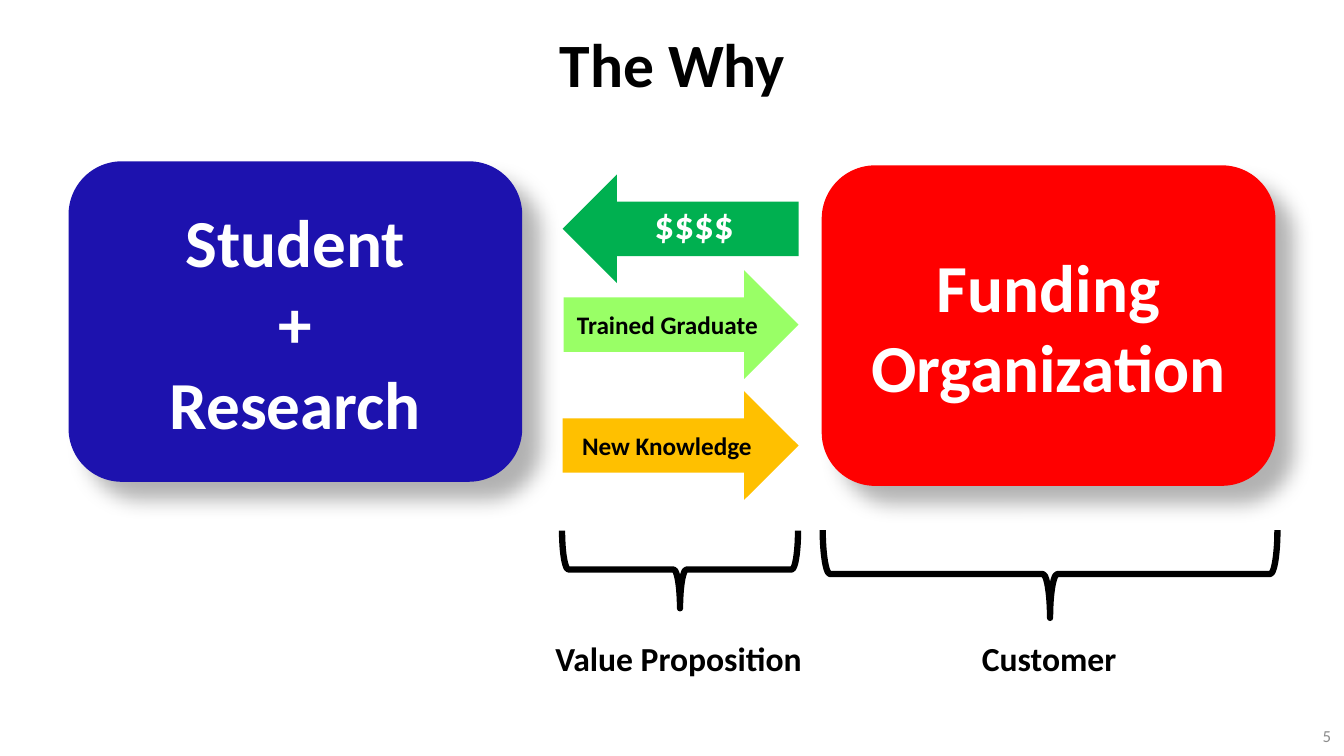
from dataclasses import dataclass

from lxml import etree
from pptx import Presentation
from pptx import util as u
from pptx.dml.color import RGBColor
from pptx.enum import shapes, text
from pptx.oxml import ns

SCALE = 9144
FONT = "Calibri"
BLACK = RGBColor(0x00, 0x00, 0x00)
WHITE = RGBColor(0xFF, 0xFF, 0xFF)
GRAY = RGBColor(0x8C, 0x8C, 0x8C)
BLUE = RGBColor(0x1D, 0x12, 0xAE)
RED = RGBColor(0xFF, 0x00, 0x00)
GREEN = RGBColor(0x00, 0xB0, 0x50)
LIME = RGBColor(0x99, 0xFF, 0x66)
AMBER = RGBColor(0xFF, 0xC0, 0x00)

SHAPE = shapes.MSO_SHAPE
ALIGN = text.PP_ALIGN
ANCHOR = text.MSO_ANCHOR


@dataclass(frozen=True)
class Frame:
    left: int
    top: int
    width: int
    height: int

    def emu(self) -> tuple[int, ...]:
        return tuple(side * SCALE for side in (self.left, self.top, self.width, self.height))


@dataclass(frozen=True)
class Block:
    kind: SHAPE
    frame: Frame
    fill: RGBColor
    lines: tuple[str, ...]
    size: int
    color: RGBColor
    shadow: bool = False
    bottom_inset: int = 5


@dataclass(frozen=True)
class Label:
    frame: Frame
    line: str
    size: int = 24
    color: RGBColor = BLACK
    bold: bool = True
    align: ALIGN = ALIGN.CENTER
    anchor: ANCHOR = ANCHOR.TOP
    wrap: bool = True


BLOCKS = (
    Block(SHAPE.ROUNDED_RECTANGLE, Frame(68, 160, 450, 318), BLUE,
          ("Student", "+", "Research"), 48, WHITE, shadow=True),
    Block(SHAPE.ROUNDED_RECTANGLE, Frame(815, 164, 450, 318), RED,
          ("Funding Organization",), 48, WHITE, shadow=True),
    Block(SHAPE.LEFT_ARROW, Frame(558, 173, 234, 108), GREEN,
          ("$$$$",), 28, WHITE, bottom_inset=15),
    Block(SHAPE.RIGHT_ARROW, Frame(558, 388, 234, 108), AMBER,
          ("New Knowledge",), 18, BLACK),
    Block(SHAPE.RIGHT_ARROW, Frame(559, 268, 233, 108), LIME,
          ("Trained Graduate",), 18, BLACK),
)
BRACES = (Frame(636, 448, 77, 234), Frame(998, 344, 87, 451))
LABELS = (
    Label(Frame(541, 628, 267, 50), "Value Proposition", align=ALIGN.LEFT, wrap=False),
    Label(Frame(948, 628, 185, 50), "Customer"),
    Label(Frame(1019, 710, 311, 40), "5", 12, GRAY, False, ALIGN.RIGHT, ANCHOR.MIDDLE),
)


def write(text_frame, lines: tuple[str, ...], size: int, color: RGBColor,
          bold: bool = True, align: ALIGN = ALIGN.CENTER,
          anchor: ANCHOR = ANCHOR.MIDDLE) -> None:
    text_frame.vertical_anchor = anchor
    for index, line in enumerate(lines):
        paragraph = text_frame.add_paragraph() if index else text_frame.paragraphs[0]
        paragraph.alignment = align
        run = paragraph.add_run()
        run.text = line
        run.font.name = FONT
        run.font.size = u.Pt(size)
        run.font.bold = bold
        run.font.color.rgb = color


def add_shadow(shape) -> None:
    effects = shape._element.spPr.find(ns.qn("a:effectLst"))
    shadow = etree.SubElement(effects, ns.qn("a:outerShdw"), blurRad=str(u.Pt(15)),
                              dist=str(u.Pt(18)), dir=str(45 * 60000),
                              algn="tl", rotWithShape="0")
    color = etree.SubElement(shadow, ns.qn("a:srgbClr"), val=str(BLACK))
    etree.SubElement(color, ns.qn("a:alpha"), val="30000")


def add_block(slide, block: Block) -> None:
    shape = slide.shapes.add_shape(block.kind, *block.frame.emu())
    shape.shadow.inherit = False
    if block.shadow:
        add_shadow(shape)
    shape.fill.solid()
    shape.fill.fore_color.rgb = block.fill
    shape.line.fill.background()
    shape.text_frame.word_wrap = True
    shape.text_frame.margin_bottom = block.bottom_inset * SCALE
    write(shape.text_frame, block.lines, block.size, block.color)


def add_brace(slide, frame: Frame) -> None:
    brace = slide.shapes.add_shape(SHAPE.LEFT_BRACE, *frame.emu())
    brace.rotation = 270
    brace.shadow.inherit = False
    brace.fill.background()
    brace.line.color.rgb = BLACK
    brace.line.width = u.Pt(4.5)


def add_label(slide, label: Label) -> None:
    box = slide.shapes.add_textbox(*label.frame.emu())
    box.text_frame.word_wrap = label.wrap
    write(box.text_frame, (label.line,), label.size, label.color,
          label.bold, label.align, label.anchor)


def main() -> None:
    presentation = Presentation()
    presentation.slide_width = 1333 * SCALE
    presentation.slide_height = 750 * SCALE
    slide = presentation.slides.add_slide(presentation.slide_layouts.get_by_name("Title Only"))

    title = slide.shapes.title
    title.left, title.top, title.width, title.height = Frame(67, 0, 1200, 125).emu()
    write(title.text_frame, ("The Why",), 44, BLACK)

    for block in BLOCKS:
        add_block(slide, block)
    for frame in BRACES:
        add_brace(slide, frame)
    for label in LABELS:
        add_label(slide, label)

    presentation.save("out.pptx")


if __name__ == "__main__":
    main()
